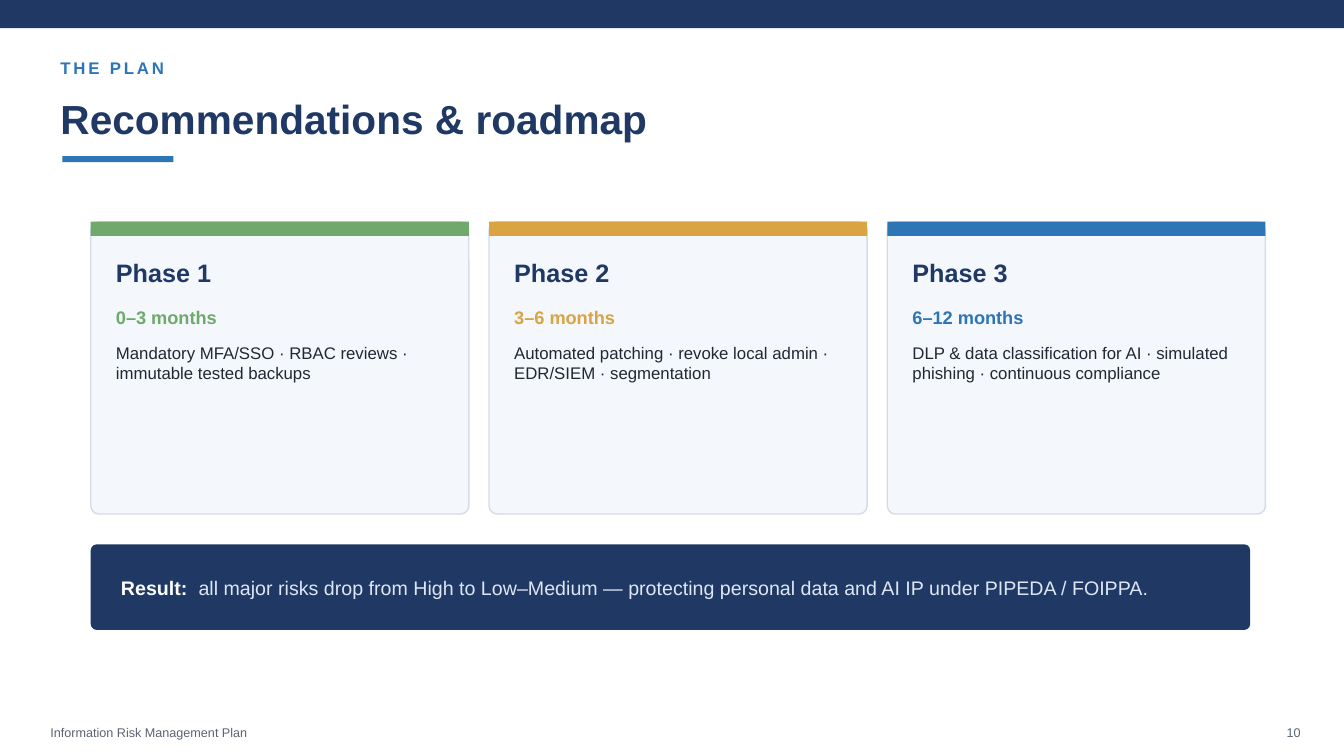
from pptx import Presentation
from pptx.dml.color import RGBColor
from pptx.enum.shapes import MSO_SHAPE as SHAPE
from pptx.enum.text import MSO_ANCHOR as ANCHOR, MSO_AUTO_SIZE as AUTO, PP_ALIGN as ALIGN
from pptx.util import Inches, Pt

NAVY, BLUE, GREEN, GOLD = "1F3864", "2E75B6", "6FA96B", "D9A441"
PANEL, BORDER, INK, GREY = "F4F7FC", "D5DCE6", "222833", "5B6472"
WHITE, PALE = "FFFFFF", "DDE6F4"

PHASES = [
    ("Phase 1", "0–3 months", GREEN,
     "Mandatory MFA/SSO · RBAC reviews · immutable tested backups"),
    ("Phase 2", "3–6 months", GOLD,
     "Automated patching · revoke local admin · EDR/SIEM · segmentation"),
    ("Phase 3", "6–12 months", BLUE,
     "DLP & data classification for AI · simulated phishing · continuous compliance"),
]


def rgb(color):
    return RGBColor.from_string(color)


def add_box(s, x, y, w, h, fill, line=None, radius=None):
    kind = SHAPE.ROUNDED_RECTANGLE if radius else SHAPE.RECTANGLE
    sp = s.shapes.add_shape(kind, Inches(x), Inches(y), Inches(w), Inches(h))
    sp.shadow.inherit = False
    sp.fill.solid()
    sp.fill.fore_color.rgb = rgb(fill)
    if radius:
        sp.adjustments[0] = radius / min(w, h)
    if line:
        sp.line.color.rgb = rgb(line)
        sp.line.width = Pt(1)
    else:
        sp.line.fill.background()


def add_run(p, text, size, color, bold=False, spacing=0):
    r = p.add_run()
    r.text = text
    r.font.name = "Arial"
    r.font.size = Pt(size)
    r.font.bold = bold
    r.font.color.rgb = rgb(color)
    if spacing:
        r.font._element.set("spc", str(round(spacing * 100)))


def add_text(s, x, y, w, h, *runs, anchor=ANCHOR.MIDDLE, align=ALIGN.LEFT):
    tf = s.shapes.add_textbox(Inches(x), Inches(y), Inches(w), Inches(h)).text_frame
    tf.margin_left = tf.margin_right = tf.margin_top = tf.margin_bottom = 0
    tf.word_wrap = True
    tf.auto_size = AUTO.SHAPE_TO_FIT_TEXT
    tf.vertical_anchor = anchor
    p = tf.paragraphs[0]
    p.alignment = align
    for run in runs:
        add_run(p, *run)


def add_header(s, x, y, w):
    add_text(s, x, y, w, 0.19, ("THE PLAN", 12, BLUE, True, 2))
    add_text(s, x, y + 0.37, w + 0.1, 0.45, ("Recommendations & roadmap", 29, NAVY, True))
    add_box(s, x + 0.02, y + 0.97, 1.1, 0.06, BLUE)


def add_phase(s, x, y, w, h, name, months, accent, actions):
    left, inner = x + 0.25, w - 0.45
    add_box(s, x, y, w, h, PANEL, BORDER, 0.08)
    add_box(s, x, y, w, 0.14, accent)
    add_text(s, left, y + 0.36, inner, 0.28, (name, 18, NAVY, True))
    add_text(s, left, y + 0.85, inner, 0.2, (months, 13, accent, True))
    add_text(s, left, y + 1.2, inner, 0.38, (actions, 12, INK), anchor=ANCHOR.TOP)


def add_phases(s, x, y, w, h, gap):
    card_w = (w - gap * (len(PHASES) - 1)) / len(PHASES)
    for i, phase in enumerate(PHASES):
        add_phase(s, x + i * (card_w + gap), y, card_w, h, *phase)


def add_result(s, x, y, w, h):
    add_box(s, x, y, w, h, NAVY, radius=0.06)
    add_text(s, x + 0.3, y + 0.32, w - 0.5, 0.22,
             ("Result:", 14, WHITE, True),
             (" ", 14, WHITE, True, 3.9),
             ("all major risks drop from High to Low–Medium — protecting "
              "personal data and AI IP under PIPEDA / FOIPPA.", 14, PALE))


def add_footer(s, x, y, w, h):
    add_text(s, x, y, 10, h, ("Information Risk Management Plan", 9, GREY))
    add_text(s, x + w - 0.5, y, 0.5, h, ("10", 9, GREY), align=ALIGN.RIGHT)


def main():
    prs = Presentation()
    prs.slide_width, prs.slide_height = Inches(13.33), Inches(7.5)
    s = prs.slides.add_slide(prs.slide_layouts[6])
    s.background.fill.solid()
    s.background.fill.fore_color.rgb = rgb(WHITE)
    add_box(s, 0, 0, 13.33, 0.28, NAVY)
    add_header(s, 0.6, 0.58, 12)
    add_phases(s, 0.9, 2.2, 11.65, 2.9, 0.2)
    add_result(s, 0.9, 5.4, 11.5, 0.85)
    add_footer(s, 0.5, 7.2, 12.4, 0.14)
    prs.save("out.pptx")


if __name__ == "__main__":
    main()
